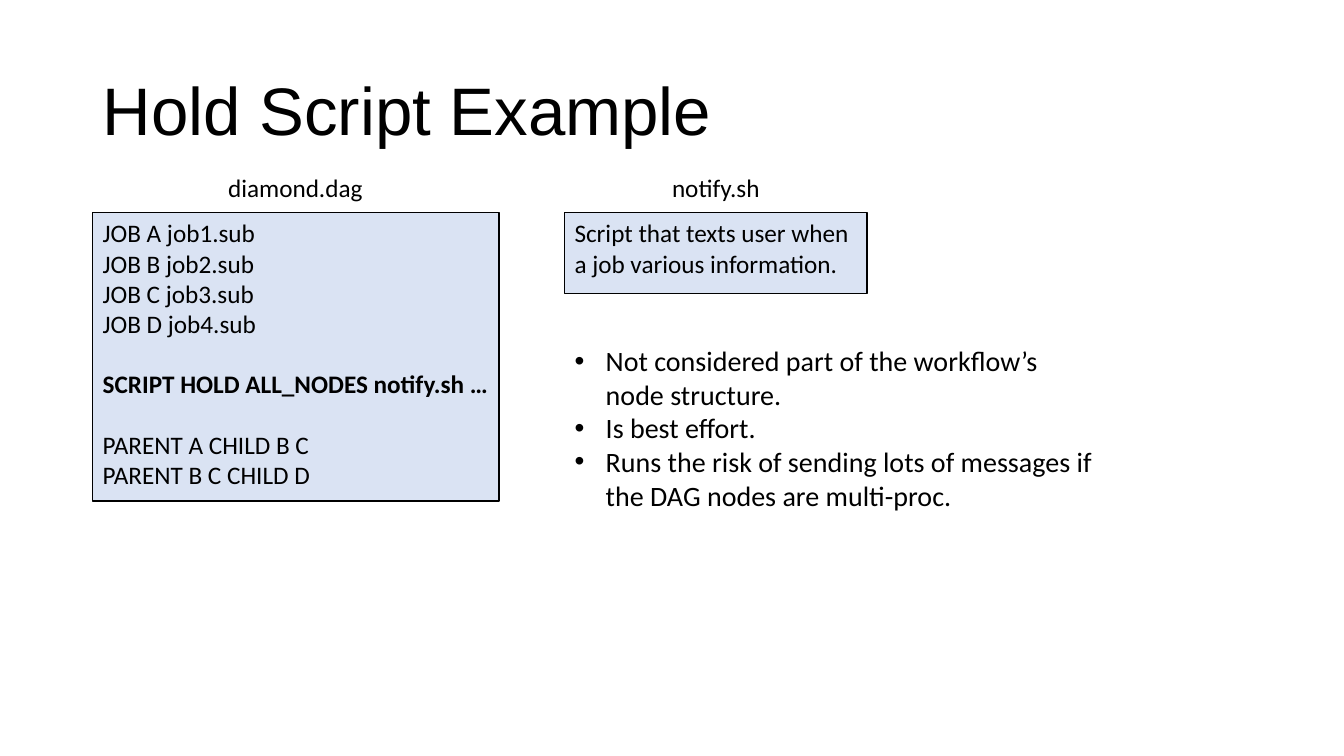
from lxml import etree
from pptx import Presentation
from pptx.dml.color import RGBColor
from pptx.enum.shapes import MSO_SHAPE
from pptx.enum.text import MSO_ANCHOR, PP_ALIGN
from pptx.oxml.ns import qn
from pptx.util import Emu, Pt

RECTANGLE = MSO_SHAPE.RECTANGLE
TOP, MIDDLE = MSO_ANCHOR.TOP, MSO_ANCHOR.MIDDLE
LEFT, CENTER = PP_ALIGN.LEFT, PP_ALIGN.CENTER

PX = 9144  # 100 px to the inch
BLACK, PALE_BLUE = "000000", "DAE3F3"
BLANK_LINE = 21.5  # points
BULLET_INDENT = 31
LABEL_WIDTH, LABEL_HEIGHT = 250, 40

DAG_GROUPS = [
    ["JOB A job1.sub", "JOB B job2.sub", "JOB C job3.sub", "JOB D job4.sub"],
    ["SCRIPT HOLD ALL_NODES notify.sh …"],
    ["PARENT A CHILD B C", "PARENT B C CHILD D"],
]
REMARKS = [
    "Not considered part of the workflow’s node structure.",
    "Is best effort.",
    "Runs the risk of sending lots of messages if the DAG nodes are multi-proc.",
]


def px(length):
    return Emu(length * PX)


def color(hex_string):
    return RGBColor.from_string(hex_string)


def add_text_box(page, box, anchor=TOP):
    frame = page.shapes.add_textbox(*map(px, box)).text_frame
    frame.word_wrap = True
    frame.vertical_anchor = anchor
    return frame


def add_panel(page, box):
    panel = page.shapes.add_shape(RECTANGLE, *map(px, box))
    panel.shadow.inherit = False
    panel.fill.solid()
    panel.fill.fore_color.rgb = color(PALE_BLUE)
    panel.line.color.rgb = color(BLACK)
    panel.line.width = Pt(1)
    frame = panel.text_frame
    frame.word_wrap = True
    frame.vertical_anchor = TOP
    return frame


def write(frame, text, size, font="Calibri", bold=False, align=LEFT):
    """Fill the empty first paragraph, or add one after it."""
    para = frame.paragraphs[0]
    if para.runs:
        para = frame.add_paragraph()
    para.alignment = align
    span = para.add_run()
    span.text = text
    span.font.name = font
    span.font.size = Pt(size)
    span.font.bold = bold
    span.font.color.rgb = color(BLACK)
    return para


def add_bullet(para):
    properties = para._p.get_or_add_pPr()
    properties.set("marL", str(px(BULLET_INDENT)))
    properties.set("indent", str(-px(BULLET_INDENT)))
    etree.SubElement(properties, qn("a:buFont")).set("typeface", "Arial")
    etree.SubElement(properties, qn("a:buChar")).set("char", "•")


def add_title(page, box):
    para = write(add_text_box(page, box, MIDDLE), "Hold Script Example", 48, "Arial")
    para.line_spacing = 0.9


def add_file(page, box, name, groups):
    """A panel with its file name centred above; groups are a line apart."""
    left, top, width, _ = box
    label_box = (left + (width - LABEL_WIDTH) // 2, top - 45, LABEL_WIDTH, LABEL_HEIGHT)
    write(add_text_box(page, label_box), name, 18, align=CENTER)
    frame = add_panel(page, box)
    for group_number, lines in enumerate(groups):
        for line_number, line in enumerate(lines):
            para = write(frame, line, 18, bold=line.startswith("SCRIPT"))
            if group_number and line_number == 0:
                para.space_before = Pt(BLANK_LINE)


def add_remarks(page, box):
    frame = add_text_box(page, box)
    for remark in REMARKS:
        add_bullet(write(frame, remark, 20))


def main():
    deck = Presentation()
    deck.slide_width, deck.slide_height = px(1333), px(750)
    page = deck.slides.add_slide(deck.slide_layouts[6])
    add_title(page, (92, 40, 1150, 145))
    add_file(page, (92, 211, 403, 286), "diamond.dag", DAG_GROUPS)
    add_file(page, (560, 211, 300, 80), "notify.sh",
             [["Script that texts user when a job various information."]])
    add_remarks(page, (560, 336, 540, 178))
    deck.save("out.pptx")


if __name__ == "__main__":
    main()
